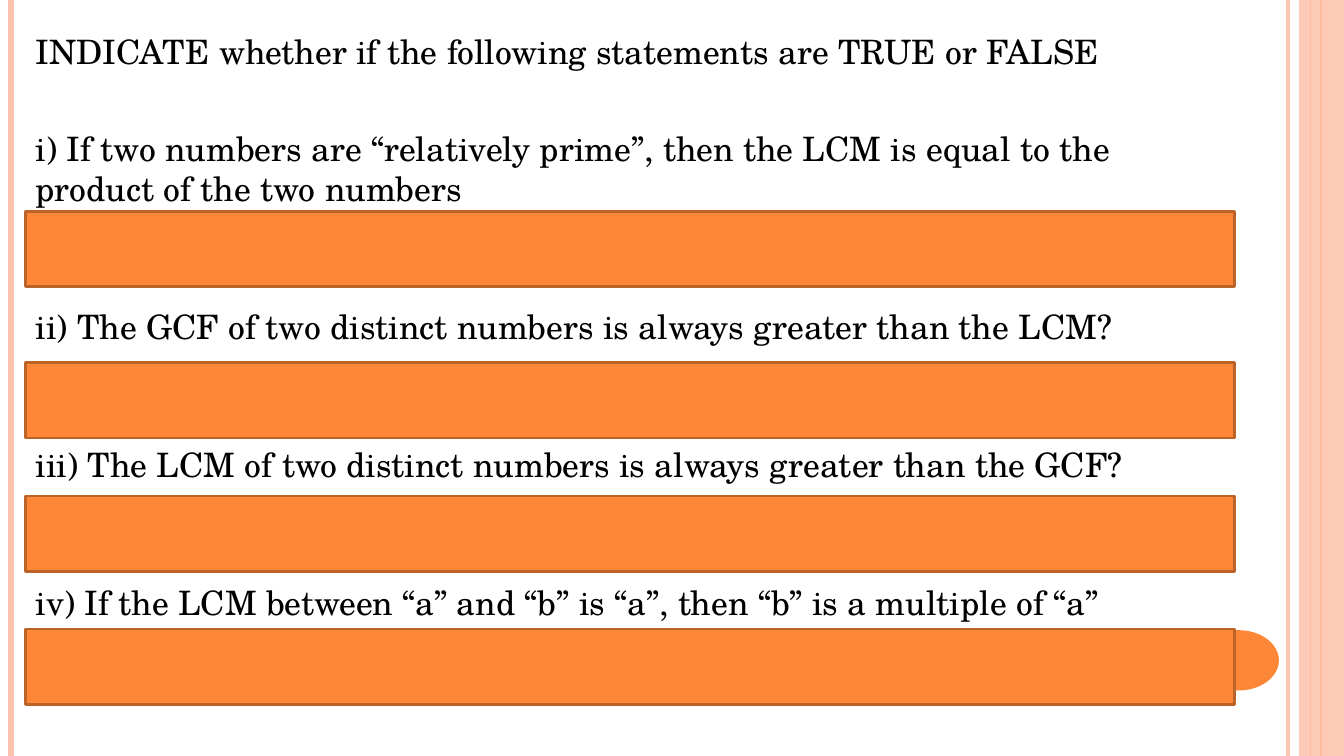
from dataclasses import dataclass

from lxml.etree import SubElement
from pptx import Presentation
from pptx.dml.color import RGBColor
from pptx.enum.shapes import MSO_CONNECTOR, MSO_SHAPE
from pptx.enum.text import MSO_ANCHOR, MSO_AUTO_SIZE, PP_ALIGN
from pptx.oxml.ns import qn
from pptx.shapes.autoshape import Shape
from pptx.slide import Slide
from pptx.util import Cm, Pt

ORANGE = RGBColor(0xFE, 0x86, 0x37)
DARK_ORANGE = RGBColor(0xBC, 0x63, 0x29)
PEACH = RGBColor(0xFE, 0xC3, 0xAE)
BLACK = RGBColor(0, 0, 0)
FONT = "TeX Gyre Schola"
SLIDE_WIDTH, SLIDE_HEIGHT = 33.87, 19.05
MARGIN, CONTENT_WIDTH = 0.64, 30.48
BAR_HEIGHT = 1.9


@dataclass(frozen=True)
class Stripe:
    x: float
    weight: float
    color: RGBColor
    opacity: int = 100


@dataclass(frozen=True)
class Block:
    preset: MSO_SHAPE
    left: float
    top: float
    width: float
    height: float
    fill: RGBColor
    opacity: int = 100
    outline: RGBColor | None = None


@dataclass(frozen=True)
class Statement:
    text: str
    space_before: float


STRIPES = (
    Stripe(32.46, 3, PEACH, 93),
    Stripe(0.28, 4.5, PEACH),
    Stripe(33.3, 1.5, ORANGE),
    Stripe(33.02, 0.75, ORANGE),
)
SIDE_BAND = Block(MSO_SHAPE.RECTANGLE, 32.74, 0, 1.13, SLIDE_HEIGHT, PEACH, 87)
PAGE_BADGE = Block(MSO_SHAPE.OVAL, 30.2, 15.88, 2.03, 1.52, ORANGE)
ANSWER_COVERS = tuple(
    Block(MSO_SHAPE.RECTANGLE, MARGIN, top, CONTENT_WIDTH, BAR_HEIGHT, ORANGE,
          outline=DARK_ORANGE)
    for top in (5.33, 9.14, 12.5, 15.85)
)
STATEMENTS = (
    Statement("INDICATE whether if the following statements are TRUE or FALSE", 6),
    Statement("i) If two numbers are “relatively prime”, then the LCM is equal to "
              "the product of the two numbers", 40.8),
    Statement("ii) The GCF of two distinct numbers is always greater than the LCM?", 69.6),
    Statement("iii) The LCM of two distinct numbers is always greater than the GCF?", 69.6),
    Statement("iv) If the LCM between “a” and “b” is “a”, then “b” is a multiple of “a”", 69.6),
)


def set_opacity(properties, percent: int) -> None:
    """Apply an opacity to the solid colour of a fill or line element."""
    if percent < 100:
        color = properties.find(qn("a:solidFill"))[0]
        SubElement(color, qn("a:alpha"), val=str(percent * 1000))


def draw_stripe(slide: Slide, stripe: Stripe) -> None:
    line = slide.shapes.add_connector(
        MSO_CONNECTOR.STRAIGHT, Cm(stripe.x), 0, Cm(stripe.x), Cm(SLIDE_HEIGHT))
    line.line.color.rgb = stripe.color
    line.line.width = Pt(stripe.weight)
    properties = line._element.spPr
    set_opacity(properties.find(qn("a:ln")), stripe.opacity)
    SubElement(properties, qn("a:effectLst"))


def draw_block(slide: Slide, block: Block) -> None:
    shape = slide.shapes.add_shape(
        block.preset, Cm(block.left), Cm(block.top), Cm(block.width), Cm(block.height))
    shape.shadow.inherit = False
    shape.fill.solid()
    shape.fill.fore_color.rgb = block.fill
    set_opacity(shape._element.spPr, block.opacity)
    if block.outline is None:
        shape.line.fill.background()
    else:
        shape.line.color.rgb = block.outline
        shape.line.width = Pt(2)


def write_statements(body: Shape) -> None:
    body.left, body.top = Cm(MARGIN), Cm(MARGIN)
    body.width, body.height = Cm(CONTENT_WIDTH), Cm(15.88)
    frame = body.text_frame
    frame.word_wrap = True
    frame.auto_size = MSO_AUTO_SIZE.NONE
    frame.vertical_anchor = MSO_ANCHOR.TOP
    for index, statement in enumerate(STATEMENTS):
        paragraph = frame.add_paragraph() if index else frame.paragraphs[0]
        paragraph.alignment = PP_ALIGN.LEFT
        paragraph.space_before = Pt(statement.space_before)
        properties = paragraph._p.get_or_add_pPr()
        properties.set("marL", "0")
        properties.set("indent", "0")
        SubElement(properties, qn("a:buNone"))
        run = paragraph.add_run()
        run.text = statement.text
        run.font.name = FONT
        run.font.size = Pt(24)
        run.font.color.rgb = BLACK


def main() -> None:
    deck = Presentation()
    deck.slide_width, deck.slide_height = Cm(SLIDE_WIDTH), Cm(SLIDE_HEIGHT)
    slide = deck.slides.add_slide(deck.slide_layouts[1])
    heading = slide.shapes.title._element
    heading.getparent().remove(heading)
    write_statements(slide.placeholders[1])
    for stripe in STRIPES:
        draw_stripe(slide, stripe)
    for block in (SIDE_BAND, PAGE_BADGE, *ANSWER_COVERS):
        draw_block(slide, block)
    deck.save("out.pptx")


if __name__ == "__main__":
    main()
